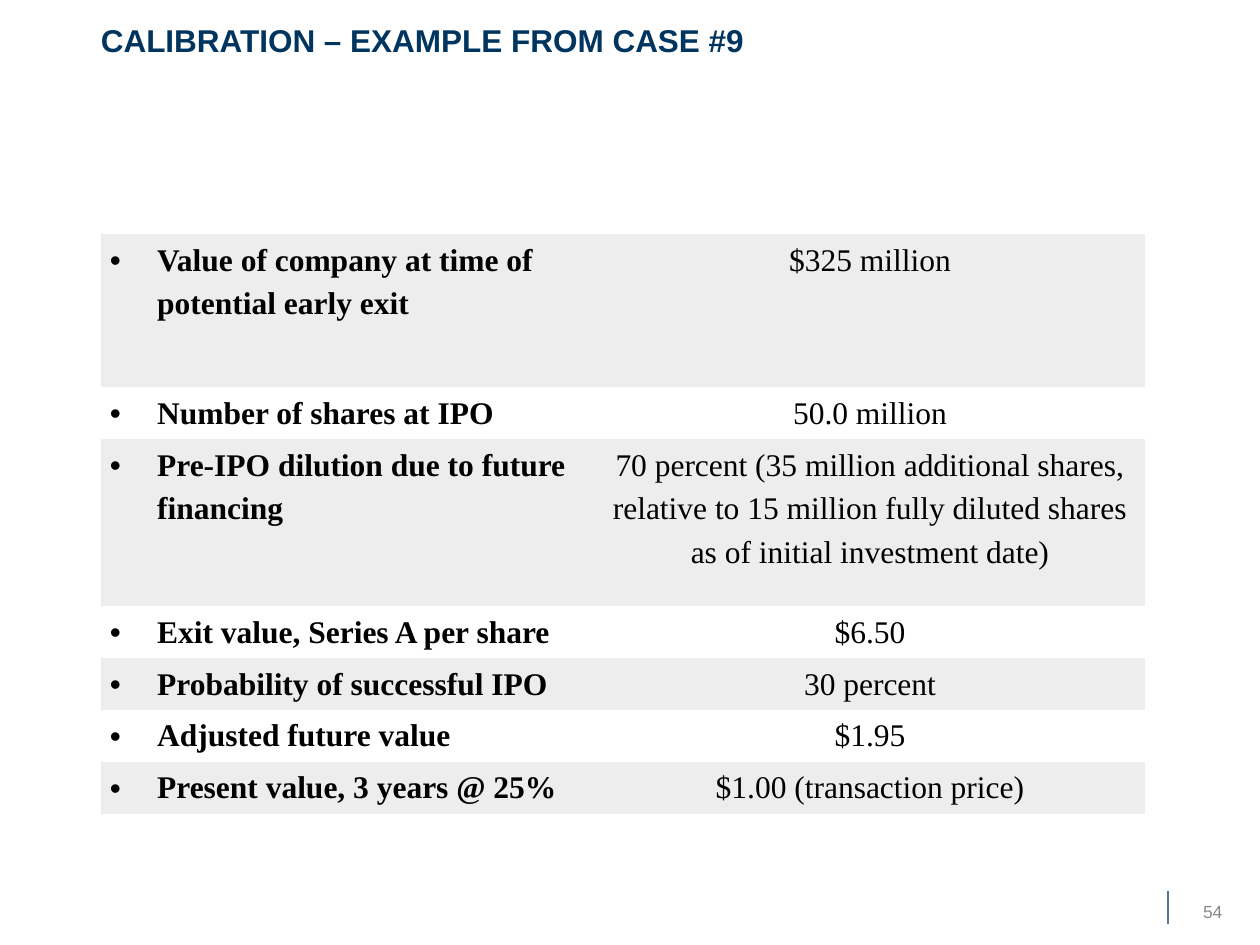
from lxml import etree
from pptx import Presentation
from pptx.dml.color import RGBColor
from pptx.enum import shapes, text
from pptx.oxml.ns import qn
from pptx.util import Pt

TITLE = "CALIBRATION – EXAMPLE FROM CASE #9"
PAGE = "54"
SHORT = 29.7
ROWS = [
    ("Value of company at time of potential early exit", "$325 million", 87.5),
    ("Number of shares at IPO", "50.0 million", SHORT),
    ("Pre-IPO dilution due to future financing",
     "70 percent (35 million additional shares, relative to 15 million "
     "fully diluted shares as of initial investment date)", 95.4),
    ("Exit value, Series A per share", "$6.50", SHORT),
    ("Probability of successful IPO", "30 percent", SHORT),
    ("Adjusted future value", "$1.95", SHORT),
    ("Present value, 3 years @ 25%", "$1.00 (transaction price)", SHORT),
]
COLS = (282.4, 314.4)
THEME = {
    "navy": "00355F", "rule": "4F779C", "gray": "898989",
    "band": "EDEDED", "ink": "000000",
    "sans": "Arial", "serif": "Times New Roman",
    "big": 18, "small": 10,
}
PLAIN = "{2D5ABB26-0587-4C30-8999-92F81FD0307C}"
ALIGN = text.PP_ALIGN


def color(name):
    return RGBColor.from_string(THEME[name])


def write(frame, words, font="sans", size="big", ink="ink", bold=False,
          align=ALIGN.LEFT, lead=1.0, after=0, bullet=False):
    para = frame.paragraphs[0]
    para.text = words
    para.alignment = align
    para.line_spacing = lead
    para.space_before = Pt(0)
    para.space_after = Pt(after)
    if bullet:
        props = para._p.get_or_add_pPr()
        props.set("marL", str(Pt(27)))
        props.set("indent", str(-Pt(27)))
        etree.SubElement(props, qn("a:buFont")).set("typeface", "Arial")
        etree.SubElement(props, qn("a:buChar")).set("char", "•")
    face = para.runs[0].font
    face.name = THEME[font]
    face.size = Pt(THEME[size])
    face.bold = bold
    face.color.rgb = color(ink)


def place(shape, left, top, width, height):
    shape.left, shape.top = Pt(left), Pt(top)
    shape.width, shape.height = Pt(width), Pt(height)


def add_head(slide):
    head = slide.shapes.title
    place(head, 50.4, 6.5, 517.7, 32.4)
    frame = head.text_frame
    frame.word_wrap = True
    frame.auto_size = text.MSO_AUTO_SIZE.NONE
    frame.vertical_anchor = text.MSO_ANCHOR.MIDDLE
    write(frame, TITLE, ink="navy", bold=True)


def add_foot(slide):
    rule = slide.shapes.add_connector(
        shapes.MSO_CONNECTOR.STRAIGHT, Pt(667.4), Pt(509), Pt(667.4), Pt(527.8))
    rule.line.color.rgb = color("rule")
    rule.line.width = Pt(1.5)
    etree.SubElement(rule._element.spPr, qn("a:effectLst"))
    box = slide.shapes.add_textbox(Pt(669.6), Pt(511.2), Pt(36), Pt(28.8))
    box.text_frame.word_wrap = True
    write(box.text_frame, PAGE, size="small", ink="gray", align=ALIGN.RIGHT)


def add_grid(slide):
    high = sum(row[2] for row in ROWS)
    shape = slide.shapes.add_table(
        len(ROWS), len(COLS), Pt(57.6), Pt(133.9), Pt(sum(COLS)), Pt(high))
    grid = shape.table
    grid.first_row = grid.horz_banding = False
    grid._tbl.tblPr.find(qn("a:tableStyleId")).text = PLAIN
    for col, width in zip(grid.columns, COLS):
        col.width = Pt(width)
    for i, (label, value, height) in enumerate(ROWS):
        grid.rows[i].height = Pt(height)
        after = 3 if i == len(ROWS) - 1 else 6
        for j, words in enumerate((label, value)):
            cell = grid.cell(i, j)
            cell.margin_left = cell.margin_right = Pt(5.2)
            cell.margin_top = cell.margin_bottom = Pt(0)
            if i % 2:
                cell.fill.background()
            else:
                cell.fill.solid()
                cell.fill.fore_color.rgb = color("band")
            first = j == 0
            write(cell.text_frame, words, font="serif", bold=first, bullet=first,
                  align=ALIGN.LEFT if first else ALIGN.CENTER,
                  lead=1.25, after=after)


def main():
    deck = Presentation()
    deck.slide_width, deck.slide_height = Pt(720), Pt(540)
    slide = deck.slides.add_slide(deck.slide_layouts[5])
    add_head(slide)
    add_foot(slide)
    add_grid(slide)
    deck.save("out.pptx")


if __name__ == "__main__":
    main()
